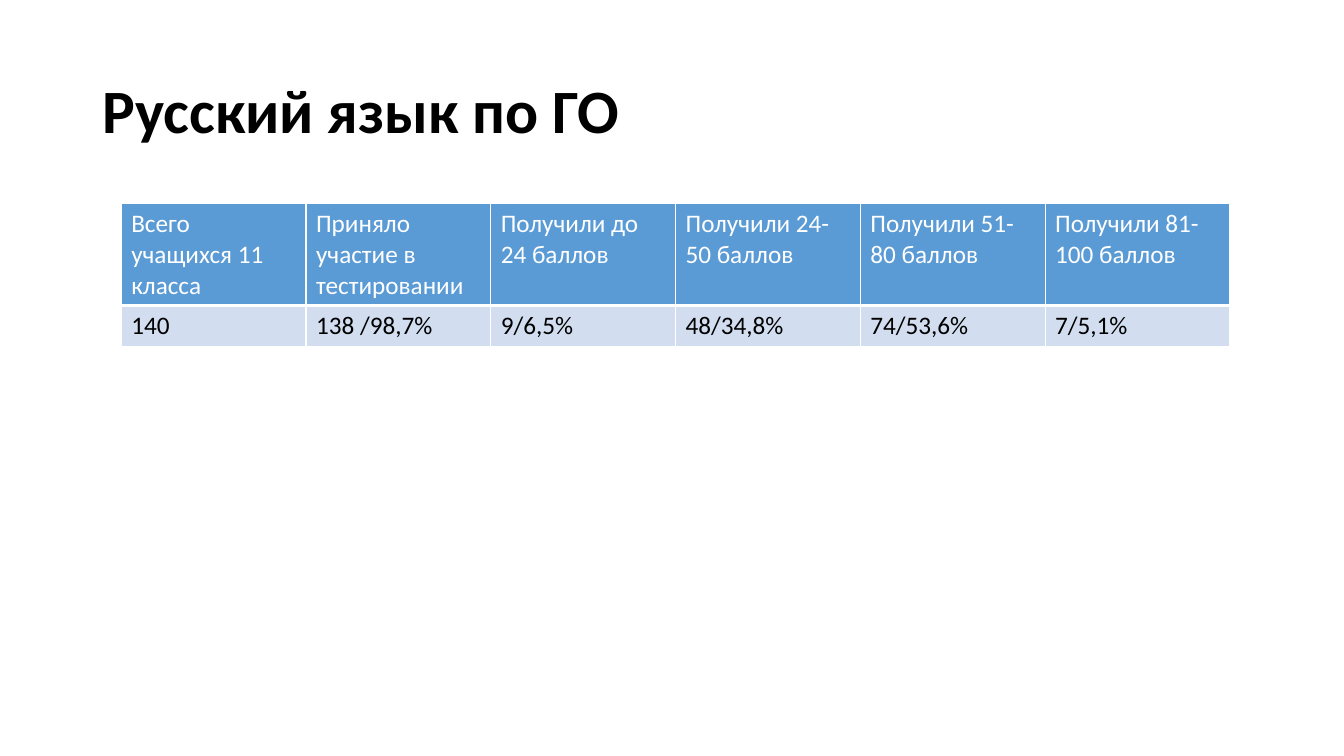
from dataclasses import dataclass

from lxml.etree import SubElement
from pptx import Presentation
from pptx.dml.color import RGBColor
from pptx.enum.text import MSO_ANCHOR, PP_ALIGN
from pptx.oxml.ns import qn
from pptx.util import Pt


@dataclass(frozen=True)
class Theme:
    font: str = "Calibri"
    title_size: int = 44
    table_size: int = 18
    dark: str = "000000"
    light: str = "FFFFFF"
    header_fill: str = "5B9BD5"
    body_fill: str = "D2DEEF"
    border: str = "FFFFFF"
    thin: int = 1
    thick: int = 3


RESULTS = (
    ("Всего учащихся 11 класса", "Приняло участие в тестировании", "Получили до 24 баллов",
     "Получили 24-50 баллов", "Получили 51-80 баллов", "Получили 81-100 баллов"),
    ("140", "138 /98,7%", "9/6,5%", "48/34,8%", "74/53,6%", "7/5,1%"),
)


class SlideBuilder:
    def __init__(self, slide, theme):
        self.slide = slide
        self.theme = theme

    def add_text(self, text_frame, text, size, color, bold=False, line_spacing=1.0):
        paragraph = text_frame.paragraphs[0]
        paragraph.alignment = PP_ALIGN.LEFT
        paragraph.line_spacing = line_spacing
        run = paragraph.add_run()
        run.text = text
        run.font.color.rgb = RGBColor.from_string(color)
        font_format = {"name": self.theme.font, "size": Pt(size), "bold": bold}
        for name, value in font_format.items():
            setattr(run.font, name, value)

    def add_title(self, text, left, top, width, height):
        box = self.slide.shapes.add_textbox(Pt(left), Pt(top), Pt(width), Pt(height))
        frame_format = {"word_wrap": True, "vertical_anchor": MSO_ANCHOR.MIDDLE}
        for name, value in frame_format.items():
            setattr(box.text_frame, name, value)
        self.add_text(box.text_frame, text, self.theme.title_size, self.theme.dark,
                      bold=True, line_spacing=0.9)

    def set_borders(self, cell, bottom_width):
        """Draw all four cell edges; must run before the cell is filled."""
        properties = cell._tc.get_or_add_tcPr()
        widths = {"L": self.theme.thin, "R": self.theme.thin,
                  "T": self.theme.thin, "B": bottom_width}
        for side, width in widths.items():
            line = SubElement(properties, qn(f"a:ln{side}"), w=str(Pt(width)))
            fill = SubElement(line, qn("a:solidFill"))
            SubElement(fill, qn("a:srgbClr"), val=self.theme.border)

    def add_table(self, rows, left, top, column_width, row_heights):
        theme = self.theme
        column_count = len(rows[0])
        frame = self.slide.shapes.add_table(
            len(rows), column_count, Pt(left), Pt(top),
            Pt(column_width * column_count), Pt(sum(row_heights)))
        table = frame.table
        for column in table.columns:
            column.width = Pt(column_width)
        for row_index, (texts, height) in enumerate(zip(rows, row_heights)):
            table.rows[row_index].height = Pt(height)
            is_header = row_index == 0
            text_color = theme.light if is_header else theme.dark
            fill_color = theme.header_fill if is_header else theme.body_fill
            for column_index, text in enumerate(texts):
                cell = table.cell(row_index, column_index)
                self.set_borders(cell, theme.thick if is_header else theme.thin)
                cell.fill.solid()
                cell.fill.fore_color.rgb = RGBColor.from_string(fill_color)
                self.add_text(cell.text_frame, text, theme.table_size, text_color)


def main():
    presentation = Presentation()
    presentation.slide_width = Pt(960)
    presentation.slide_height = Pt(540)
    slide = presentation.slides.add_slide(presentation.slide_layouts[6])
    builder = SlideBuilder(slide, Theme())
    builder.add_title("Русский язык по ГО", 66, 29, 828, 104.4)
    builder.add_table(RESULTS, left=86.6, top=145.5, column_width=132, row_heights=(72.8, 29.2))
    presentation.save("out.pptx")


if __name__ == "__main__":
    main()
